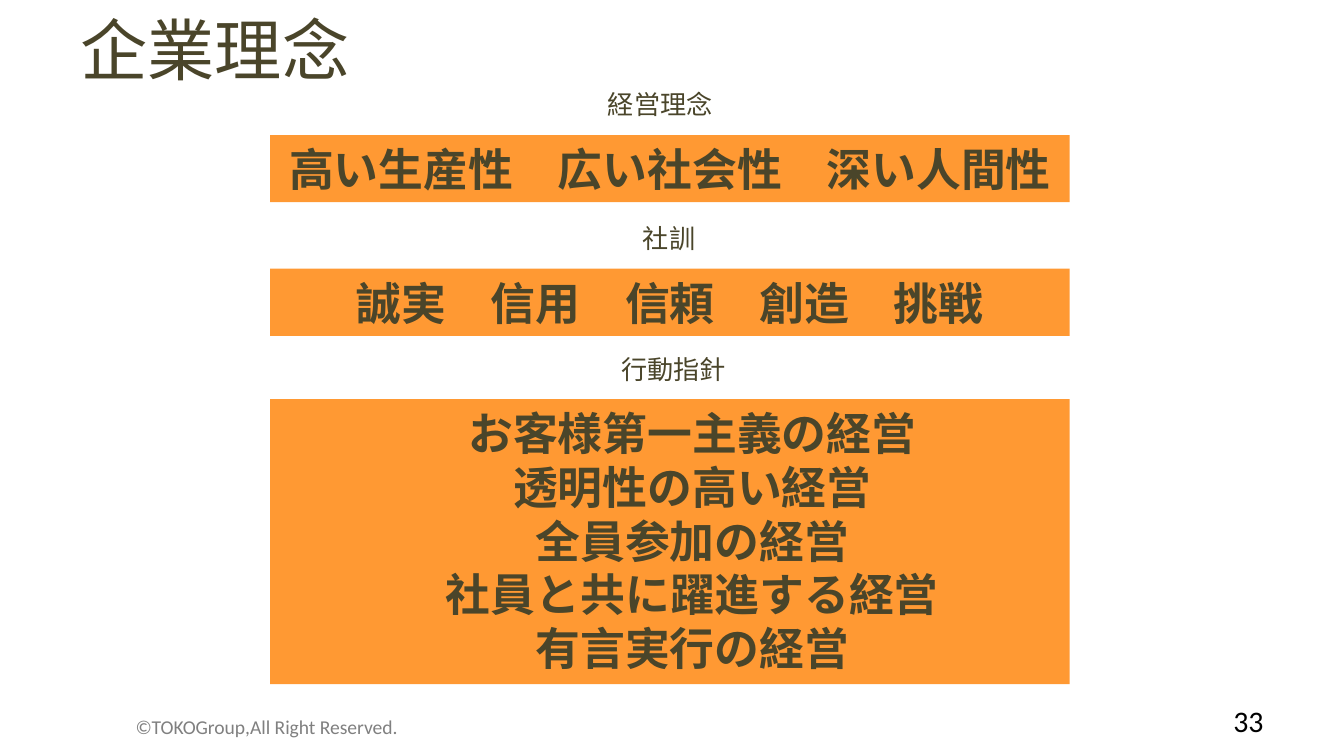
from dataclasses import dataclass

from pptx import Presentation
from pptx.dml.color import RGBColor
from pptx.enum.shapes import MSO_SHAPE as SHAPE
from pptx.enum.text import MSO_ANCHOR as ANCHOR, PP_ALIGN as ALIGN
from pptx.util import Emu, Pt

PX = 4572  # EMU per px, 200 px to the inch
SLIDE_W, SLIDE_H = 2000, 1125
COLORS = {"olive": "4A452A", "orange": "FF9933", "gray": "808080", "black": "000000"}
BAND_X, BAND_W = 402, 1190

# Text formats
TITLE = {"size": Pt(36), "name": "Calibri"}
FOOTER = {"size": Pt(10.5), "name": "Calibri"}
NUMBER = {"size": Pt(16), "name": "Calibri"}
LABEL = {"size": Pt(14), "name": "Arial"}
CREED = {"size": Pt(24), "name": "Arial", "bold": True}


@dataclass
class Text:
    box: tuple[int, int, int, int]
    lines: list[str]
    font: dict
    color: str = "olive"
    align: ALIGN = ALIGN.LEFT
    anchor: ANCHOR = ANCHOR.MIDDLE
    wrap: bool = True


@dataclass
class Section:
    label: str
    label_box: tuple[int, int, int, int]
    top: int
    height: int
    lines: list[str]


TEXTS = [
    Text((100, -4, 916, 154), ["企業理念"], TITLE),
    Text((182, 1051, 510, 60), ["©TOKOGroup,All Right Reserved."], FOOTER, "gray"),
    Text((1434, 1043, 466, 60), ["33"], NUMBER, "black", ALIGN.RIGHT),
]

SECTIONS = [
    Section("経営理念", (885, 122, 198, 68), 201, 100,
            ["高い生産性　広い社会性　深い人間性"]),
    Section("社訓", (937, 321, 118, 68), 400, 100,
            ["誠実　信用　信頼　創造　挑戦"]),
    Section("行動指針", (905, 516, 198, 68), 594, 424, [
        "　お客様第一主義の経営",
        "　透明性の高い経営",
        "　全員参加の経営",
        "　社員と共に躍進する経営",
        "　有言実行の経営",
    ]),
]


def emu(box: tuple[int, int, int, int]) -> list[Emu]:
    return [Emu(v * PX) for v in box]


def rgb(name: str) -> RGBColor:
    return RGBColor.from_string(COLORS[name])


def write(sp, text: Text) -> None:
    tf = sp.text_frame
    tf.word_wrap = text.wrap
    tf.vertical_anchor = text.anchor
    for i, line in enumerate(text.lines):
        p = tf.add_paragraph() if i else tf.paragraphs[0]
        p.alignment = text.align
        r = p.add_run()
        r.text = line
        for key, value in text.font.items():
            setattr(r.font, key, value)
        r.font.color.rgb = rgb(text.color)


def add_text(s, text: Text) -> None:
    write(s.shapes.add_textbox(*emu(text.box)), text)


def add_section(s, section: Section) -> None:
    # Orange band with its creed
    box = (BAND_X, section.top, BAND_W, section.height)
    sp = s.shapes.add_shape(SHAPE.RECTANGLE, *emu(box))
    sp.shadow.inherit = False
    sp.fill.solid()
    sp.fill.fore_color.rgb = rgb("orange")
    sp.line.fill.background()
    write(sp, Text(box, section.lines, CREED, align=ALIGN.CENTER, anchor=ANCHOR.TOP))
    # Label above the band
    add_text(s, Text(section.label_box, [section.label], LABEL,
                     anchor=ANCHOR.TOP, wrap=False))


def main() -> None:
    prs = Presentation()
    prs.slide_width, prs.slide_height = Emu(SLIDE_W * PX), Emu(SLIDE_H * PX)
    s = prs.slides.add_slide(prs.slide_layouts[6])

    # Title, footer and page number
    for text in TEXTS:
        add_text(s, text)

    # Labelled bands
    for section in SECTIONS:
        add_section(s, section)

    prs.save("out.pptx")


if __name__ == "__main__":
    main()
